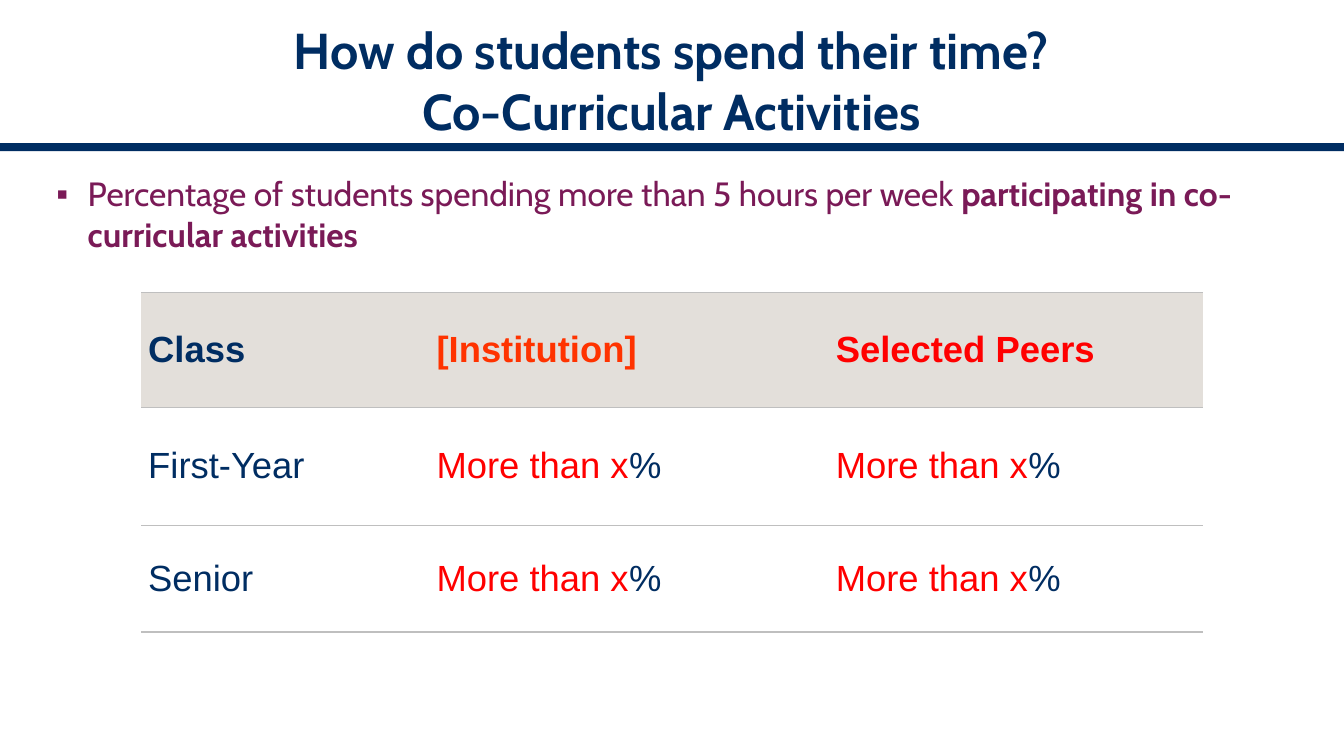
from pptx import Presentation
from pptx.dml.color import RGBColor
from pptx.enum.shapes import MSO_SHAPE
from pptx.enum.text import MSO_ANCHOR, MSO_AUTO_SIZE, PP_ALIGN
from pptx.oxml import parse_xml
from pptx.oxml.ns import nsdecls, qn
from pptx.util import Inches, Pt

NAVY, PLUM, RED, ORANGE = "002D62", "7A1A57", "FF0000", "FF3300"
HEADER_FILL, RULE_GRAY = "E3DFDA", "BFBFBF"
NO_STYLE = "{2D5ABB26-0587-4C30-8999-92F81FD0307C}"

COLUMN_WIDTHS = [2.86, 3.96, 3.71]
ROW_HEIGHTS = [1.14, 1.17, 1.06]
SHARE = [("More than x", RED), ("%", NAVY)]
ROWS = [
    [[("Class", NAVY)], [("[Institution]", ORANGE)], [("Selected Peers", RED)]],
    [[("First-Year", NAVY)], SHARE, SHARE],
    [[("Senior", NAVY)], SHARE, SHARE],
]


def rgb(color):
    return RGBColor.from_string(color)


def place(shape, left, top, width, height):
    shape.left, shape.top = Inches(left), Inches(top)
    shape.width, shape.height = Inches(width), Inches(height)


def add_run(paragraph, text, size, font, color, bold=False):
    run = paragraph.add_run()
    run.text = text
    run.font.size, run.font.name, run.font.bold = Pt(size), font, bold
    run.font.color.rgb = rgb(color)


def add_header_band(slide):
    band = slide.shapes.add_shape(MSO_SHAPE.RECTANGLE, 0, Inches(1.42), Inches(13.33), Inches(0.08))
    band.shadow.inherit = False
    band.fill.solid()
    band.fill.fore_color.rgb = rgb(NAVY)
    band.line.fill.background()


def fill_title(title, lines):
    place(title, 0.44, 0.25, 12.44, 1.08)
    frame = title.text_frame
    frame.auto_size = MSO_AUTO_SIZE.NONE
    frame.vertical_anchor = MSO_ANCHOR.MIDDLE
    heading = frame.paragraphs[0]
    heading.alignment = PP_ALIGN.CENTER
    for index, line in enumerate(lines):
        if index:
            heading.add_line_break()
        add_run(heading, line, 36, "Cabin", NAVY, True)


def fill_body(body, parts):
    place(body, 0.33, 1.67, 12.56, 2.08)
    body.text_frame.auto_size = MSO_AUTO_SIZE.NONE
    statement = body.text_frame.paragraphs[0]
    statement.level = 1
    # Hanging square bullet
    properties = statement._p.get_or_add_pPr()
    properties.set("marL", str(Inches(0.44)))
    properties.set("indent", str(Inches(-0.31)))
    for bullet in (f'<a:buClr {nsdecls("a")}><a:srgbClr val="{PLUM}"/></a:buClr>',
                   f'<a:buFont {nsdecls("a")} typeface="Arial"/>',
                   f'<a:buChar {nsdecls("a")} char="▪"/>'):
        properties.append(parse_xml(bullet))
    statement.space_before = Pt(0)
    for text, bold in parts:
        add_run(statement, text, 24, "Cabin", PLUM, bold)


def add_borders(cell, sides):
    properties = cell._tc.get_or_add_tcPr()
    for position, side in enumerate(sides):
        properties.insert(position, parse_xml(
            f'<a:ln{side} {nsdecls("a")} w="{Pt(1)}"><a:solidFill>'
            f'<a:srgbClr val="{RULE_GRAY}"/></a:solidFill></a:ln{side}>'))


def fill_cell(cell, parts, is_header, border_sides):
    cell.vertical_anchor = MSO_ANCHOR.MIDDLE
    cell.margin_left = cell.margin_right = Inches(0.07)
    cell.margin_top = cell.margin_bottom = Inches(0.05)
    if is_header:
        cell.fill.solid()
        cell.fill.fore_color.rgb = rgb(HEADER_FILL)
    else:
        cell.fill.background()
    add_borders(cell, border_sides)
    for text, color in parts:
        add_run(cell.text_frame.paragraphs[0], text, 26, "Arial", color, is_header)


def add_share_table(slide):
    frame = slide.shapes.add_table(
        len(ROWS), len(COLUMN_WIDTHS), Inches(1.4), Inches(2.9),
        Inches(sum(COLUMN_WIDTHS)), Inches(sum(ROW_HEIGHTS)))
    table = frame.table
    table.horz_banding = False
    next(frame.element.iter(qn("a:tableStyleId"))).text = NO_STYLE
    for column, width in zip(table.columns, COLUMN_WIDTHS):
        column.width = Inches(width)
    for row, height in zip(table.rows, ROW_HEIGHTS):
        row.height = Inches(height)
    # Rules enclose the header and close the last row
    row_borders = ["TB", "T", "B"]
    for r, row_parts in enumerate(ROWS):
        for c, parts in enumerate(row_parts):
            fill_cell(table.cell(r, c), parts, r == 0, row_borders[r])


def main():
    deck = Presentation()
    deck.slide_width, deck.slide_height = Inches(13.33), Inches(7.5)
    slide = deck.slides.add_slide(deck.slide_layouts[1])
    add_header_band(slide)
    # Title and statement
    fill_title(slide.shapes.title, ["How do students spend their time?", "Co-Curricular Activities"])
    fill_body(slide.placeholders[1], [
        ("Percentage of students spending more than 5 hours per week ", False),
        ("participating in co-curricular activities", True)])
    # Shares by class
    add_share_table(slide)
    deck.save("out.pptx")


if __name__ == "__main__":
    main()
